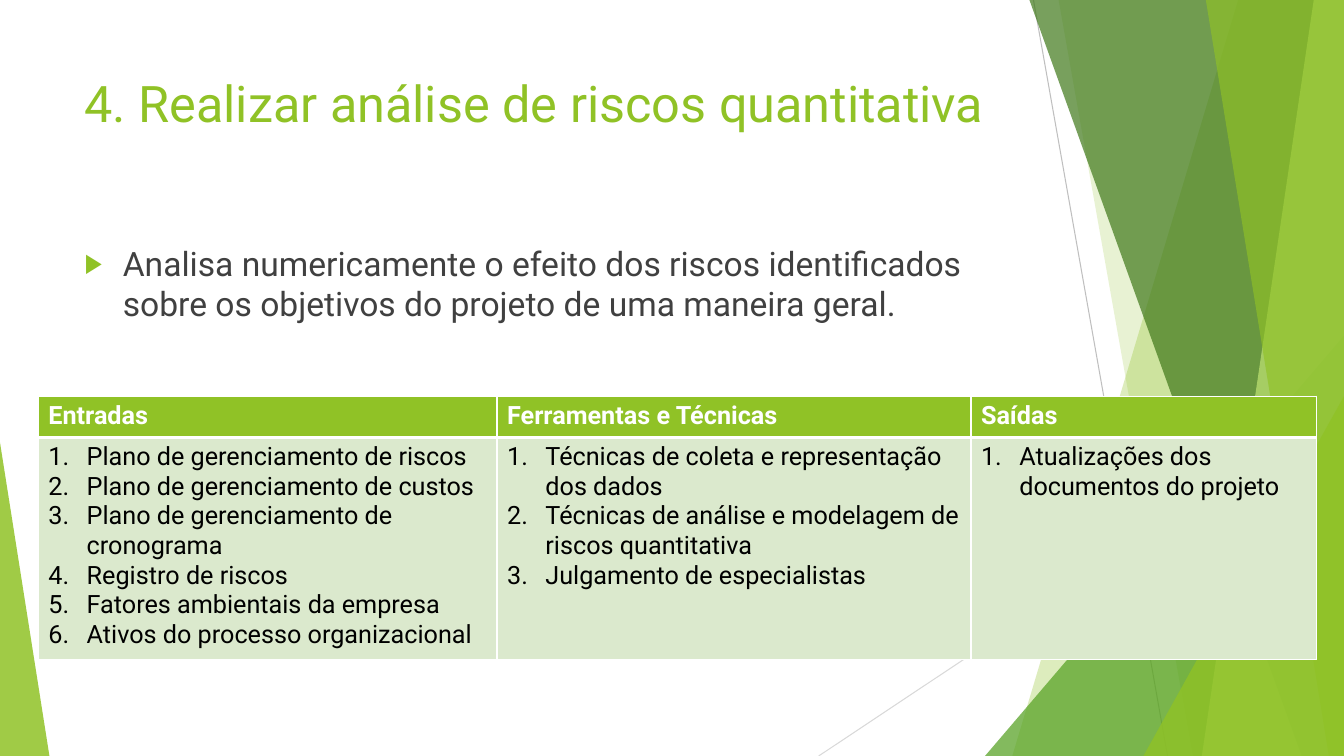
from lxml import etree
from pptx import Presentation
from pptx.dml.color import RGBColor
from pptx.enum.shapes import MSO_CONNECTOR, MSO_SHAPE
from pptx.oxml.ns import qn
from pptx.util import Inches, Pt

GREEN = RGBColor(0x90, 0xC2, 0x26)
MID_GREEN = RGBColor(0x54, 0xA0, 0x21)
DARK_GREEN = RGBColor(0x3F, 0x78, 0x19)
LIME = RGBColor(0xC0, 0xE4, 0x74)
PALE_GREEN = RGBColor(0xDB, 0xE9, 0xCD)
WHITE = RGBColor(0xFF, 0xFF, 0xFF)
BLACK = RGBColor(0, 0, 0)
TEXT_GRAY = RGBColor(0x40, 0x40, 0x40)
LINE_GRAY = RGBColor(0xBF, 0xBF, 0xBF)
LIGHT_GRAY = RGBColor(0xD9, 0xD9, 0xD9)

WIDTH, HEIGHT = 13.33, 7.5
INDENT = Inches(0.38)

COLUMNS = [
    ("Entradas", 4.55, [
        "Plano de gerenciamento de riscos",
        "Plano de gerenciamento de custos",
        "Plano de gerenciamento de cronograma",
        "Registro de riscos",
        "Fatores ambientais da empresa",
        "Ativos do processo organizacional",
    ]),
    ("Ferramentas e Técnicas", 4.7, [
        "Técnicas de coleta e representação dos dados",
        "Técnicas de análise e modelagem de riscos quantitativa",
        "Julgamento de especialistas",
    ]),
    ("Saídas", 3.43, ["Atualizações dos documentos do projeto"]),
]


def add_child(parent, tag, **attrs):
    return etree.SubElement(parent, qn(tag), {k: str(v) for k, v in attrs.items()})


def add_bullet(p, char=None, color=None, size=None):
    pPr = p._p.get_or_add_pPr()
    pPr.set("marL", str(INDENT))
    pPr.set("indent", str(-INDENT))
    if color is not None:
        add_child(add_child(pPr, "a:buClr"), "a:srgbClr", val=color)
    if size:
        add_child(pPr, "a:buSzPct", val=size * 1000)
    if char:
        add_child(pPr, "a:buFont", typeface="Wingdings 3")
        pPr[-1].set("typeface", "Arial")
        add_child(pPr, "a:buChar", char=char)
    else:
        add_child(pPr, "a:buFont", typeface="+mj-lt")
        add_child(pPr, "a:buAutoNum", type="arabicPeriod")


def write(p, text, size=18, color=BLACK, bold=False):
    r = p.add_run()
    r.text = text
    r.font.name = "Roboto"
    r.font.size = Pt(size)
    r.font.bold = bold
    r.font.color.rgb = color


def add_text_box(s, top, height):
    tf = s.shapes.add_textbox(Inches(0.74), Inches(top), Inches(9.4), Inches(height)).text_frame
    tf.word_wrap = True
    return tf.paragraphs[0]


def add_line(s, x1, y1, x2, y2, color):
    line = s.shapes.add_connector(
        MSO_CONNECTOR.STRAIGHT, Inches(x1), Inches(y1), Inches(x2), Inches(y2))
    line.line.color.rgb = color
    line.line.width = Pt(0.75)
    add_child(line._element.spPr, "a:effectLst")


def paint(sp, color, opacity):
    sp.shadow.inherit = False
    sp.line.fill.background()
    sp.fill.solid()
    sp.fill.fore_color.rgb = color
    clr = sp._element.spPr.find(qn("a:solidFill"))[0]
    add_child(clr, "a:alpha", val=opacity * 1000)


def add_band(s, top_x, bottom_x, color, opacity):
    builder = s.shapes.build_freeform(Inches(top_x), 0)
    corners = [(WIDTH, 0), (WIDTH, HEIGHT), (bottom_x, HEIGHT)]
    builder.add_line_segments([(Inches(x), Inches(y)) for x, y in corners])
    paint(builder.convert_to_shape(), color, opacity)


def add_triangle(s, left, top, width, apex, color, opacity):
    sp = s.shapes.add_shape(
        MSO_SHAPE.ISOSCELES_TRIANGLE,
        Inches(left), Inches(top), Inches(width), Inches(HEIGHT - top))
    sp.adjustments[0] = apex
    paint(sp, color, opacity)


def add_decoration(s):
    add_line(s, 10.25, 0, 11.58, HEIGHT, LINE_GRAY)
    add_line(s, WIDTH, 4.03, 8.12, HEIGHT, LIGHT_GRAY)
    add_band(s, 12.28, 10.04, GREEN, 30)
    add_band(s, 10.5, 11.83, GREEN, 20)
    add_triangle(s, 9.77, 3.33, 3.56, 1, MID_GREEN, 72)
    add_band(s, 10.21, 12.91, DARK_GREEN, 70)
    add_band(s, 13.03, 11.92, LIME, 70)
    add_band(s, 11.96, 13.18, GREEN, 65)
    add_triangle(s, 11.34, 3.93, 1.99, 1, GREEN, 80)
    add_triangle(s, 0, 4.39, 0.49, 0, GREEN, 85)


def format_cell(cell, color, top=1, bottom=1):
    tcPr = cell._tc.get_or_add_tcPr()
    for side, width in (("L", 1), ("R", 1), ("T", top), ("B", bottom)):
        ln = add_child(tcPr, f"a:ln{side}", w=Pt(width))
        add_child(add_child(ln, "a:solidFill"), "a:srgbClr", val=WHITE)
    cell.fill.solid()
    cell.fill.fore_color.rgb = color


def add_process_table(s):
    table = s.shapes.add_table(
        2, len(COLUMNS), Inches(0.38), Inches(3.93), Inches(12.68), Inches(2.56)).table
    table.rows[0].height = Inches(0.41)
    table.rows[1].height = Inches(2.15)
    for i, (heading, width, items) in enumerate(COLUMNS):
        table.columns[i].width = Inches(width)
        head, body = table.cell(0, i), table.cell(1, i)
        format_cell(head, GREEN, bottom=3)
        format_cell(body, PALE_GREEN, top=3)
        write(head.text_frame.paragraphs[0], heading, color=WHITE, bold=True)
        tf = body.text_frame
        for n, item in enumerate(items):
            p = tf.add_paragraph() if n else tf.paragraphs[0]
            add_bullet(p)
            write(p, item)


def main():
    prs = Presentation()
    prs.slide_width, prs.slide_height = Inches(WIDTH), Inches(HEIGHT)
    s = prs.slides.add_slide(prs.slide_layouts[6])
    add_decoration(s)
    write(add_text_box(s, 0.67, 1.44),
          "4. Realizar análise de riscos quantitativa", size=36, color=GREEN)
    p = add_text_box(s, 2.36, 1.2)
    add_bullet(p, "▶", GREEN, 80)
    write(p, "Analisa numericamente o efeito dos riscos identificados "
             "sobre os objetivos do projeto de uma maneira geral.", size=24, color=TEXT_GRAY)
    add_process_table(s)
    prs.save("out.pptx")


if __name__ == "__main__":
    main()
